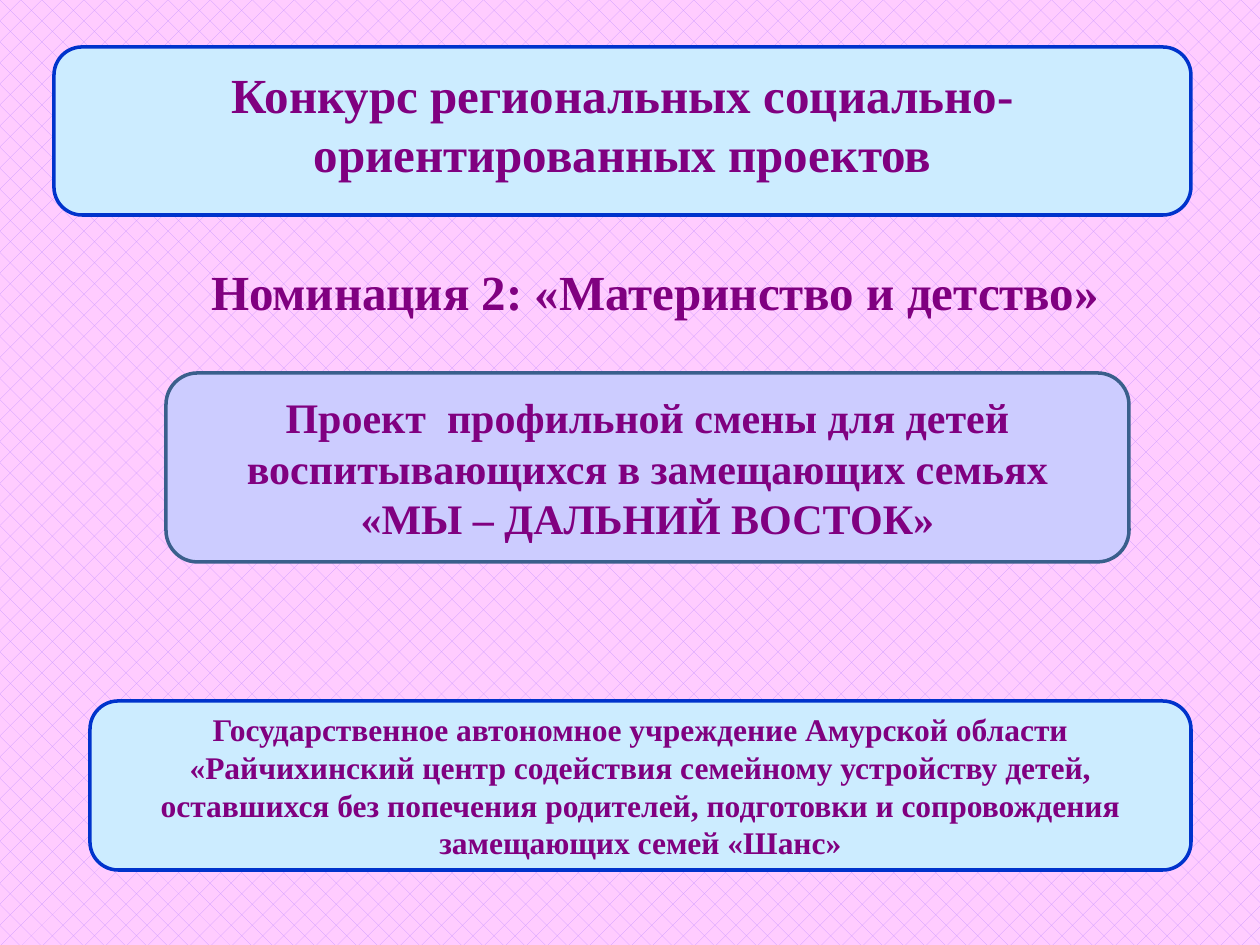
import pptx
import pptx.util
import pptx.dml.color
import pptx.enum.dml
import pptx.enum.shapes
import pptx.enum.text

EMU_PER_PX = 914400 / 126
COLORS = {
    "text": "800080",
    "sky": "CCECFF",
    "lilac": "CCCCFF",
    "blue": "0033CC",
    "steel": "3A5F8C",
    "pink": "FFCCFF",
    "violet": "CC99FF",
}


def px(length):
    return pptx.util.Emu(round(length * EMU_PER_PX))


def color(name):
    return pptx.dml.color.RGBColor.from_string(COLORS[name])


def write_text(frame, text, size, font="Times New Roman", fill="text", bold=True):
    frame.word_wrap = True
    for index, line in enumerate(text.split("\n")):
        para = frame.paragraphs[0] if index == 0 else frame.add_paragraph()
        para.alignment = pptx.enum.text.PP_ALIGN.CENTER
        span = para.add_run()
        span.text = line
        span.font.name = font
        span.font.size = pptx.util.Pt(size)
        span.font.bold = bold
        span.font.color.rgb = color(fill)


class SlideBuilder:
    def __init__(self, page):
        self.page = page
        self.line_width = pptx.util.Pt(2)

    def background(self, fore, back):
        fill = self.page.background.fill
        fill.patterned()
        fill.pattern = pptx.enum.dml.MSO_PATTERN.DOTTED_DIAMOND
        fill.fore_color.rgb = color(fore)
        fill.back_color.rgb = color(back)

    def panel(self, text, bounds, size, fill="sky", line="blue", bottom_inset=6):
        box = self.page.shapes.add_shape(
            pptx.enum.shapes.MSO_SHAPE.ROUNDED_RECTANGLE, *map(px, bounds))
        box.shadow.inherit = False
        box.fill.solid()
        box.fill.fore_color.rgb = color(fill)
        box.line.color.rgb = color(line)
        box.line.width = self.line_width
        box.text_frame.vertical_anchor = pptx.enum.text.MSO_ANCHOR.MIDDLE
        box.text_frame.margin_bottom = px(bottom_inset)
        write_text(box.text_frame, text, size)

    def label(self, text, bounds, size):
        box = self.page.shapes.add_textbox(*map(px, bounds))
        write_text(box.text_frame, text, size)


def main():
    deck = pptx.Presentation()
    deck.slide_width, deck.slide_height = px(1260), px(945)
    builder = SlideBuilder(deck.slides.add_slide(deck.slide_layouts[6]))

    builder.background("violet", "pink")
    builder.panel(
        "Государственное автономное учреждение Амурской области "
        "«Райчихинский центр содействия семейному устройству детей, "
        "оставшихся без попечения родителей, подготовки и сопровождения "
        "замещающих семей «Шанс»",
        (90, 701, 1101, 169), 18)
    builder.panel("Конкурс региональных социально-ориентированных проектов",
                  (54, 47, 1137, 168), 28, bottom_inset=22)
    builder.label("Номинация 2: «Материнство и детство»", (139, 255, 1032, 72), 28)
    builder.panel(
        "Проект  профильной смены для детей воспитывающихся в замещающих семьях\n"
        "«МЫ – ДАЛЬНИЙ ВОСТОК»",
        (166, 373, 963, 189), 24, fill="lilac", line="steel")

    deck.save("out.pptx")


if __name__ == "__main__":
    main()
